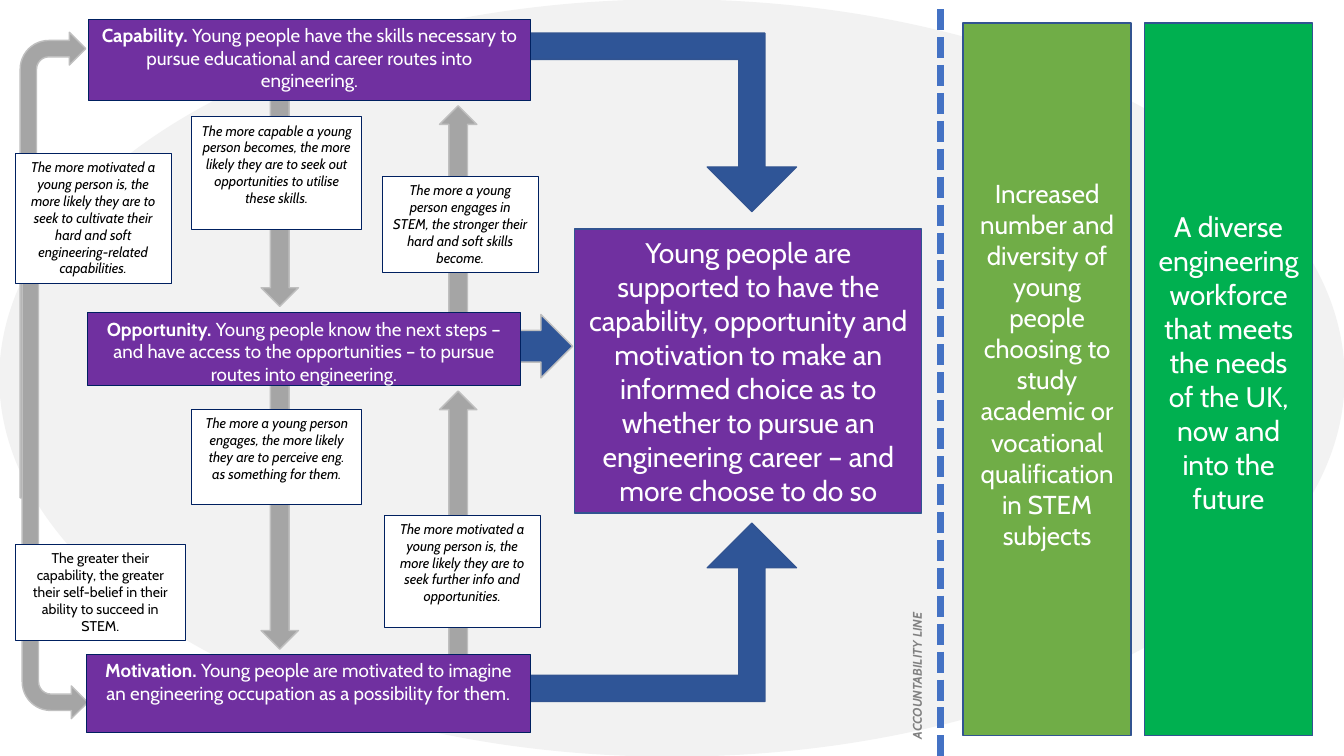
"""Build the slide on capability, opportunity and motivation in engineering."""
from dataclasses import dataclass

from pptx import Presentation
from pptx.dml.color import RGBColor
from pptx.enum import dml, shapes, text
from pptx.oxml import parse_xml
from pptx.oxml.ns import nsdecls
from pptx.util import Inches, Pt


@dataclass(frozen=True)
class Theme:
    font: str = "Cabin"
    white: str = "FFFFFF"
    black: str = "000000"
    backdrop: str = "F2F2F2"
    purple: str = "7030A0"
    navy: str = "002060"
    outline: str = "325491"
    gray: str = "A5A5A5"
    gray_edge: str = "BFBFBF"
    blue: str = "2F5597"
    divider: str = "4472C4"
    label: str = "808080"
    lime: str = "70AD47"
    green: str = "00B050"
    statement_size: float = 20.2
    outcome_size: float = 18.5
    stage_size: float = 13.4
    note_size: float = 10.1
    label_size: float = 9


THEME = Theme()
WIDTH, HEIGHT = 13.33, 7.5
LEFT_NOTES, DOWN_NOTES = 0.15, 1.9
NARROW, BROAD = 1.55, 1.69
DOWN_ARROWS, UP_ARROWS, ARROW_WIDTH = 2.59, 4.36, 0.37
SHORT_ARROW, LONG_ARROW = 2.5, 2.77
OUTCOME_LEFT, OUTCOME_STEP = 9.55, 1.8

STATEMENT = ("Young people are supported to have the capability, opportunity and motivation to make "
             "an informed choice as to whether to pursue an engineering career – and more choose to do so")
STATEMENT_BOX = (5.7, 2.27, 3.44, 2.82)

STAGES = [
    ("Capability. ", "Young people have the skills necessary to pursue educational and career "
     "routes into engineering.", (0.88, 0.19, 4.38, 0.81)),
    ("Opportunity. ", "Young people know the next steps – and have access to the opportunities – "
     "to pursue routes into engineering.", (0.87, 3.1, 4.29, 0.73)),
    ("Motivation. ", "Young people are motivated to imagine an engineering occupation as a "
     "possibility for them.", (0.86, 6.49, 4.4, 0.78)),
]

NOTES = [
    ("The more motivated a young person is, the more likely they are to seek to cultivate their "
     "hard and soft engineering-related capabilities.", (LEFT_NOTES, 1.52, NARROW, 1.29), True),
    ("The greater their capability, the greater their self-belief in their ability to succeed "
     "in STEM.", (LEFT_NOTES, 5.4, BROAD, 0.95), False),
    ("The more capable a young person becomes, the more likely they are to seek out "
     "opportunities to utilise these skills.", (DOWN_NOTES, 1.16, BROAD, 1.12), True),
    ("The more a young person engages, the more likely they are to perceive eng. as something "
     "for them.", (DOWN_NOTES, 4.06, BROAD, 0.95), True),
    ("The more a young person engages in STEM, the stronger their hard and soft skills become.",
     (3.79, 1.75, NARROW, 0.95), True),
    ("The more motivated a young person is, the more likely they are to seek further info and "
     "opportunities.", (3.81, 5.11, NARROW, 1.12), True),
]

OUTCOMES = [
    ("Increased number and diversity of young people choosing to study academic or vocational "
     "qualification in STEM subjects", THEME.lime, THEME.outcome_size, 1),
    ("A diverse engineering workforce that meets the needs of the UK, now and into the future",
     THEME.green, THEME.statement_size, 1),
]

KIND = shapes.MSO_SHAPE
GRAY_ARROWS = [
    (KIND.DOWN_ARROW, (DOWN_ARROWS, 0.54, ARROW_WIDTH, SHORT_ARROW), False),
    (KIND.DOWN_ARROW, (DOWN_ARROWS, 3.67, ARROW_WIDTH, LONG_ARROW), False),
    (KIND.DOWN_ARROW, (UP_ARROWS, 1.05, ARROW_WIDTH, SHORT_ARROW), True),
    (KIND.DOWN_ARROW, (UP_ARROWS, 3.88, ARROW_WIDTH, LONG_ARROW), True),
    (KIND.BENT_ARROW, (0.2, 0.32, 0.65, 4.62), False),
    (KIND.BENT_ARROW, (0.22, 2.51, 0.65, 4.62), True),
]
ELBOW_ARROWS = [((5.23, 0.33, 2.67, 1.77), True), ((5.23, 5.19, 2.67, 1.77), False)]


def paint(shape, fill, line, width):
    shape.fill.solid()
    shape.fill.fore_color.rgb = RGBColor.from_string(fill)
    shape.line.color.rgb = RGBColor.from_string(line)
    shape.line.width = Pt(width)


def add_shape(slide, kind, box, fill, line, width=1.0, flipped=False):
    shape = slide.shapes.add_shape(kind, *map(Inches, box))
    shape.shadow.inherit = False
    paint(shape, fill, line, width)
    if flipped:
        shape._element.spPr.xfrm.set("flipV", "1")
    return shape


def write(shape, parts, size, color, anchor=text.MSO_ANCHOR.TOP, bottom=0.05):
    """Fill a shape with one centred paragraph of (words, bold, italic) parts."""
    frame = shape.text_frame
    frame.word_wrap = True
    frame.auto_size = text.MSO_AUTO_SIZE.NONE
    frame.vertical_anchor = anchor
    frame.margin_bottom = Inches(bottom)
    paragraph = frame.paragraphs[0]
    paragraph.alignment = text.PP_ALIGN.CENTER
    for words, bold, italic in parts:
        run = paragraph.add_run()
        run.text = words
        run.font.name, run.font.size = THEME.font, Pt(size)
        run.font.bold, run.font.italic = bold, italic
        run.font.color.rgb = RGBColor.from_string(color)


def add_arrows(slide):
    for kind, box, flipped in GRAY_ARROWS:
        add_shape(slide, kind, box, THEME.gray, THEME.gray_edge, flipped=flipped)
    add_shape(slide, KIND.RIGHT_ARROW, (4.13, 3.12, 1.55, 0.63), THEME.blue, THEME.gray_edge)
    for box, flipped in ELBOW_ARROWS:
        elbow = add_shape(slide, KIND.BENT_UP_ARROW, box, THEME.blue, THEME.outline, flipped=flipped)
        elbow.adjustments[0] = 0.147


def add_boxes(slide):
    for heading, words, box in STAGES:
        stage = add_shape(slide, KIND.RECTANGLE, box, THEME.purple, THEME.navy, 0.75)
        write(stage, [(heading, True, False), (words, False, False)], THEME.stage_size, THEME.white)
    for words, box, italic in NOTES:
        note = add_shape(slide, KIND.RECTANGLE, box, THEME.white, THEME.navy, 0.75)
        write(note, [(words, False, italic)], THEME.note_size, THEME.black)
    for column, (words, fill, size, lines_up) in enumerate(OUTCOMES):
        box = (OUTCOME_LEFT + column * OUTCOME_STEP, 0.23, 1.67, 7.07)
        outcome = add_shape(slide, KIND.RECTANGLE, box, fill, THEME.outline)
        write(outcome, [(words, False, False)], size, THEME.white, text.MSO_ANCHOR.MIDDLE,
              0.05 + lines_up * size * 1.2 / 72)


def add_statement(slide):
    title = slide.shapes.title
    title.left, title.top, title.width, title.height = map(Inches, STATEMENT_BOX)
    paint(title, THEME.purple, THEME.outline, 1)
    write(title, [(STATEMENT, False, False)], THEME.statement_size, THEME.white,
          text.MSO_ANCHOR.MIDDLE)
    slide.shapes._spTree.append(title._element)


def add_accountability_line(slide):
    line = slide.shapes.add_connector(shapes.MSO_CONNECTOR.STRAIGHT, Inches(9.33), Inches(0.09),
                                      Inches(9.33), Inches(7.59))
    line.line.color.rgb = RGBColor.from_string(THEME.divider)
    line.line.width = Pt(5)
    line.line.dash_style = dml.MSO_LINE.SQUARE_DOT
    line._element.spPr.append(parse_xml(f"<a:effectLst {nsdecls('a')}/>"))
    label = slide.shapes.add_textbox(*map(Inches, (8.97, 5.63, 0.5, 2.15)))
    write(label, [("ACCOUNTABILITY LINE", True, True)], THEME.label_size, THEME.label)
    label.text_frame._txBody.bodyPr.set("vert", "vert270")


def main():
    presentation = Presentation()
    presentation.slide_width, presentation.slide_height = Inches(WIDTH), Inches(HEIGHT)
    slide = presentation.slides.add_slide(presentation.slide_layouts[5])
    add_shape(slide, KIND.OVAL, (0, 0, WIDTH, HEIGHT), THEME.backdrop, THEME.backdrop)
    add_arrows(slide)
    add_boxes(slide)
    add_statement(slide)
    add_accountability_line(slide)
    presentation.save("out.pptx")


if __name__ == "__main__":
    main()
